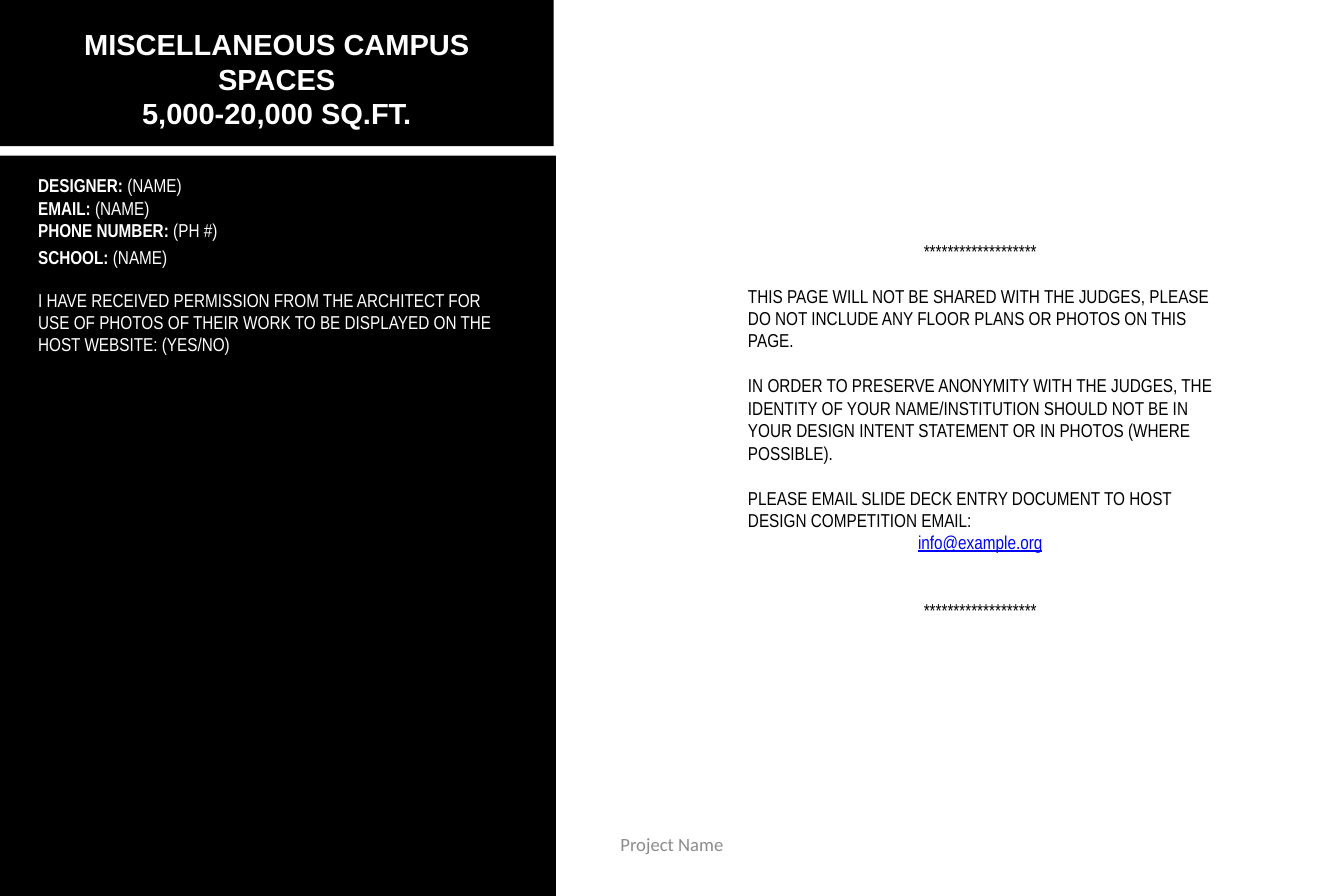
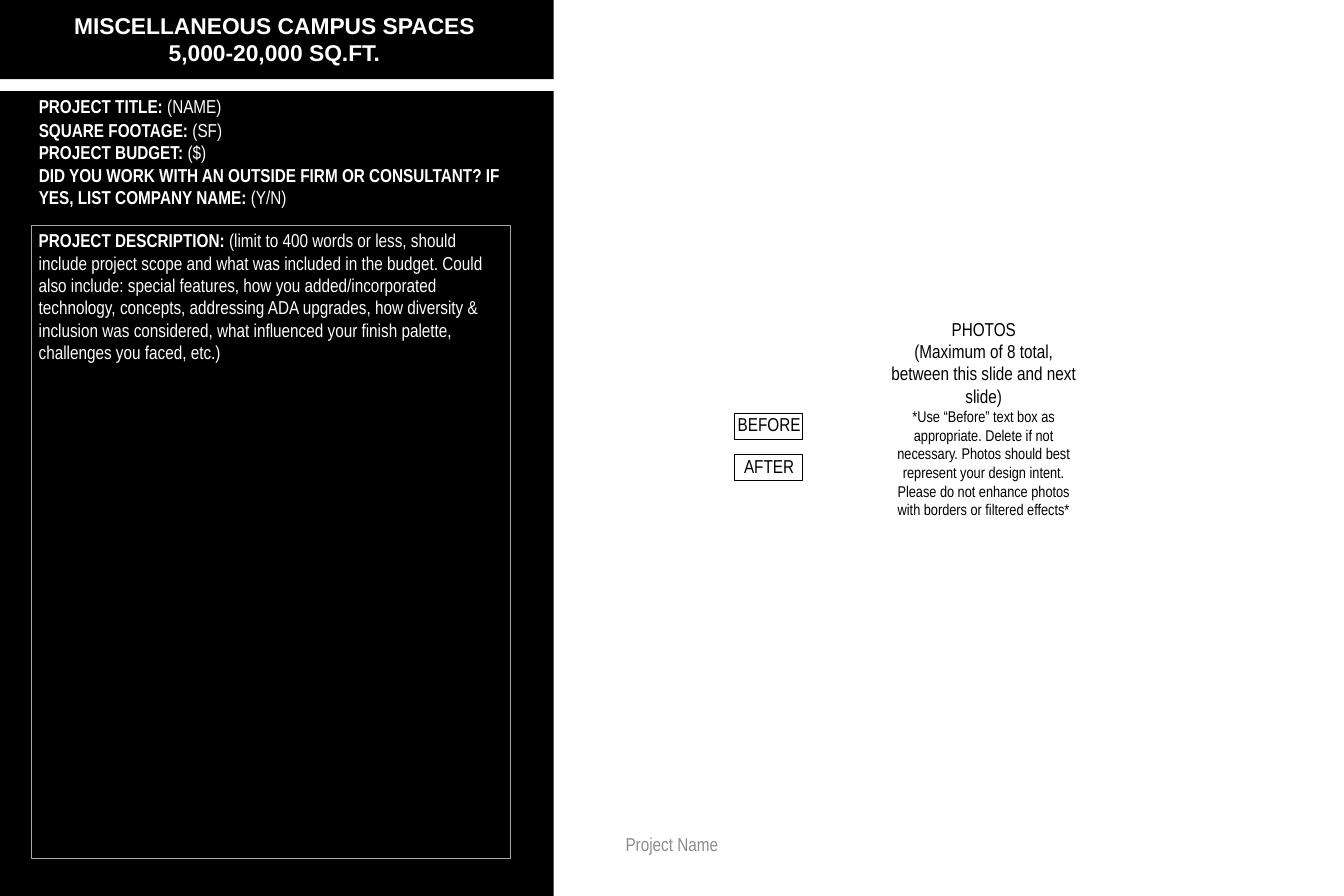
from dataclasses import dataclass, replace

from pptx import Presentation
from pptx.dml.color import RGBColor
from pptx.enum.shapes import MSO_SHAPE
from pptx.enum.text import MSO_ANCHOR, MSO_AUTO_SIZE, PP_ALIGN
from pptx.oxml.ns import qn
from pptx.util import Pt
from lxml.etree import SubElement


@dataclass(frozen=True)
class Style:
    """Look of one run of text."""
    color: str
    size: float = 18
    font: str = "Arial Narrow"
    bold: bool = False
    underline: bool = False


@dataclass(frozen=True)
class Theme:
    """Colours, type styles and spacing shared by the slides."""
    band: str = "000000"
    frame: str = "A6A6A6"
    title: Style = Style("FFFFFF", 28, "Arial", True)
    label: Style = Style("FFFFFF", bold=True)
    value: Style = Style("FFFFFF")
    text: Style = Style("000000")
    note: Style = Style("000000", 15)
    link: Style = Style("0000FF", underline=True)
    footer: Style = Style("8C8C8C")
    line_gap: float = 21.7
    margins: tuple = (7.2, 3.6)


THEME = Theme()
CENTER, LEFT = PP_ALIGN.CENTER, PP_ALIGN.LEFT
STARS = "*" * 19


def add_para(frame, spans, align=LEFT, before=0, indent=0):
    """Fill the first empty paragraph, or add one, run by run."""
    first = frame.paragraphs[0]
    para = frame.add_paragraph() if first.runs else first
    para.alignment = align
    para.space_before = Pt(before)
    properties = para._p.get_or_add_pPr()
    properties.set("marL", str(Pt(indent)))
    properties.set("indent", "0")
    SubElement(properties, qn("a:buNone"))
    for text, style in spans:
        span = para.add_run()
        span.text = text
        font = span.font
        font.name, font.size = style.font, Pt(style.size)
        font.bold, font.underline = style.bold, style.underline
        font.color.rgb = RGBColor.from_string(style.color)


def set_frame(box, margins=THEME.margins):
    """Prepare a wrapped, top-anchored text frame."""
    frame = box.text_frame
    frame.word_wrap = True
    frame.auto_size = MSO_AUTO_SIZE.NONE
    frame.vertical_anchor = MSO_ANCHOR.TOP
    frame.margin_left = frame.margin_right = Pt(margins[0])
    frame.margin_top = frame.margin_bottom = Pt(margins[1])
    return frame


def add_text(page, area, margins=THEME.margins):
    """Add a text box and return its frame."""
    return set_frame(page.shapes.add_textbox(*map(Pt, area)), margins)


def add_rectangle(page, area, fill=None, line=None, weight=0.75):
    """Add a flat rectangle with an optional fill and outline."""
    box = page.shapes.add_shape(MSO_SHAPE.RECTANGLE, *map(Pt, area))
    box.shadow.inherit = False
    if fill:
        box.fill.solid()
        box.fill.fore_color.rgb = RGBColor.from_string(fill)
    else:
        box.fill.background()
    if line:
        box.line.color.rgb = RGBColor.from_string(line)
        box.line.width = Pt(weight)
    else:
        box.line.fill.background()
    return box


def place(box, area):
    """Move a placeholder and return its prepared frame."""
    box.left, box.top, box.width, box.height = map(Pt, area)
    return set_frame(box)


def add_page(deck, bands, title_area, title_size, body_area, fields, footer_font):
    """Add a slide with bands, title, labelled fields and footer."""
    page = deck.slides.add_slide(deck.slide_layouts[1])
    for area in bands:
        band = add_rectangle(page, area, THEME.band).element
        band.getparent().insert(2, band)
    title = place(page.shapes.title, title_area)
    for text in ("MISCELLANEOUS CAMPUS SPACES", "5,000-20,000 SQ.FT."):
        add_para(title, [(text, replace(THEME.title, size=title_size))], CENTER)
    body = place(page.placeholders[1], body_area)
    for label, value, before in fields:
        spans = [(label, THEME.label)] if label else []
        add_para(body, spans + [(value, THEME.value)], before=before)
    footer = add_text(page, (440.6, 803.5, 414.7, 43.2), (0, 0))
    add_para(footer, [("Project Name", replace(THEME.footer, font=footer_font))], CENTER)
    return page


def add_entry_page(deck):
    """Build the entrant details and instructions."""
    page = add_page(
        deck, [(0, 0, 534, 141), (0, 150, 536, 714)],
        (20.2, 21.6, 493.2, 108.7), 28, (29.5, 164.2, 462.2, 183.6),
        [("DESIGNER: ", "(NAME)", 0),
         ("EMAIL: ", "(NAME)", 0),
         ("PHONE NUMBER: ", "(PH #)", 0),
         ("SCHOOL: ", "(NAME)", 4.5),
         ("", "I HAVE RECEIVED PERMISSION FROM THE ARCHITECT FOR USE OF PHOTOS "
          "OF THEIR WORK TO BE DISPLAYED ON THE HOST WEBSITE: (YES/NO)", 19.4)],
        "Calibri")
    gap = THEME.line_gap
    instructions = add_text(page, (714.2, 227.5, 462.2, 399.6))
    for text, style, align, before in (
        (STARS, THEME.text, CENTER, 0),
        ("THIS PAGE WILL NOT BE SHARED WITH THE JUDGES, PLEASE DO NOT INCLUDE "
         "ANY FLOOR PLANS OR PHOTOS ON THIS PAGE.", THEME.text, LEFT, gap),
        ("IN ORDER TO PRESERVE ANONYMITY WITH THE JUDGES, THE IDENTITY OF YOUR "
         "NAME/INSTITUTION SHOULD NOT BE IN YOUR DESIGN INTENT STATEMENT OR IN "
         "PHOTOS (WHERE POSSIBLE).", THEME.text, LEFT, gap),
        ("PLEASE EMAIL SLIDE DECK ENTRY DOCUMENT TO HOST DESIGN COMPETITION "
         "EMAIL:", THEME.text, LEFT, gap),
        ("info@example.org", THEME.link, CENTER, 0),
        (STARS, THEME.text, CENTER, 2 * gap),
    ):
        add_para(instructions, [(text, style)], align, before)


def add_project_page(deck):
    """Build the project details and photo area."""
    page = add_page(
        deck, [(0, 0, 534, 76.3), (0, 87.8, 534, 776.2)],
        (18, 7.2, 493.2, 60.5), 22, (30.2, 87.8, 462.2, 117.4),
        [("PROJECT TITLE: ", "(NAME)", 0),
         ("SQUARE FOOTAGE: ", "(SF)", 1.4),
         ("PROJECT BUDGET: ", "($)", 0),
         ("DID YOU WORK WITH AN OUTSIDE FIRM OR CONSULTANT? IF YES, LIST "
          "COMPANY NAME: ", "(Y/N)", 0)],
        "Arial Narrow")
    description = add_rectangle(
        page, (30.2, 217.4, 462.2, 609.8), line=THEME.frame, weight=0.25)
    add_para(set_frame(description), [
        ("PROJECT DESCRIPTION: ", THEME.label),
        ("(limit to 400 words or less, should include project scope and what was "
         "included in the budget. Could also include: special features, how you "
         "added/incorporated technology, concepts, addressing ADA upgrades, how "
         "diversity & inclusion was considered, what influenced your finish "
         "palette, challenges you faced, etc.)", THEME.value)])
    for row, text in enumerate(("BEFORE", "AFTER")):
        tag = add_rectangle(page, (707.8, 398.2 + row * 40.3, 66.2, 25.2), line=THEME.band)
        add_para(set_frame(tag, (0, 0)), [(text, THEME.text)], CENTER, indent=1.44)
    photos = add_text(page, (851.8, 306, 192.2, 210.2), (0, 0))
    for text, style in (
        ("PHOTOS", THEME.text),
        ("(Maximum of 8 total, between this slide and next slide)", THEME.text),
        ("*Use “Before” text box as appropriate. Delete if not necessary. Photos "
         "should best represent your design intent. Please do not enhance photos "
         "with borders or filtered effects*", THEME.note),
    ):
        add_para(photos, [(text, style)], CENTER, indent=1.44)


def main():
    """Build and save the deck."""
    deck = Presentation()
    deck.slide_width, deck.slide_height = Pt(1296), Pt(864)
    add_entry_page(deck)
    add_project_page(deck)
    deck.save("out.pptx")


if __name__ == "__main__":
    main()
